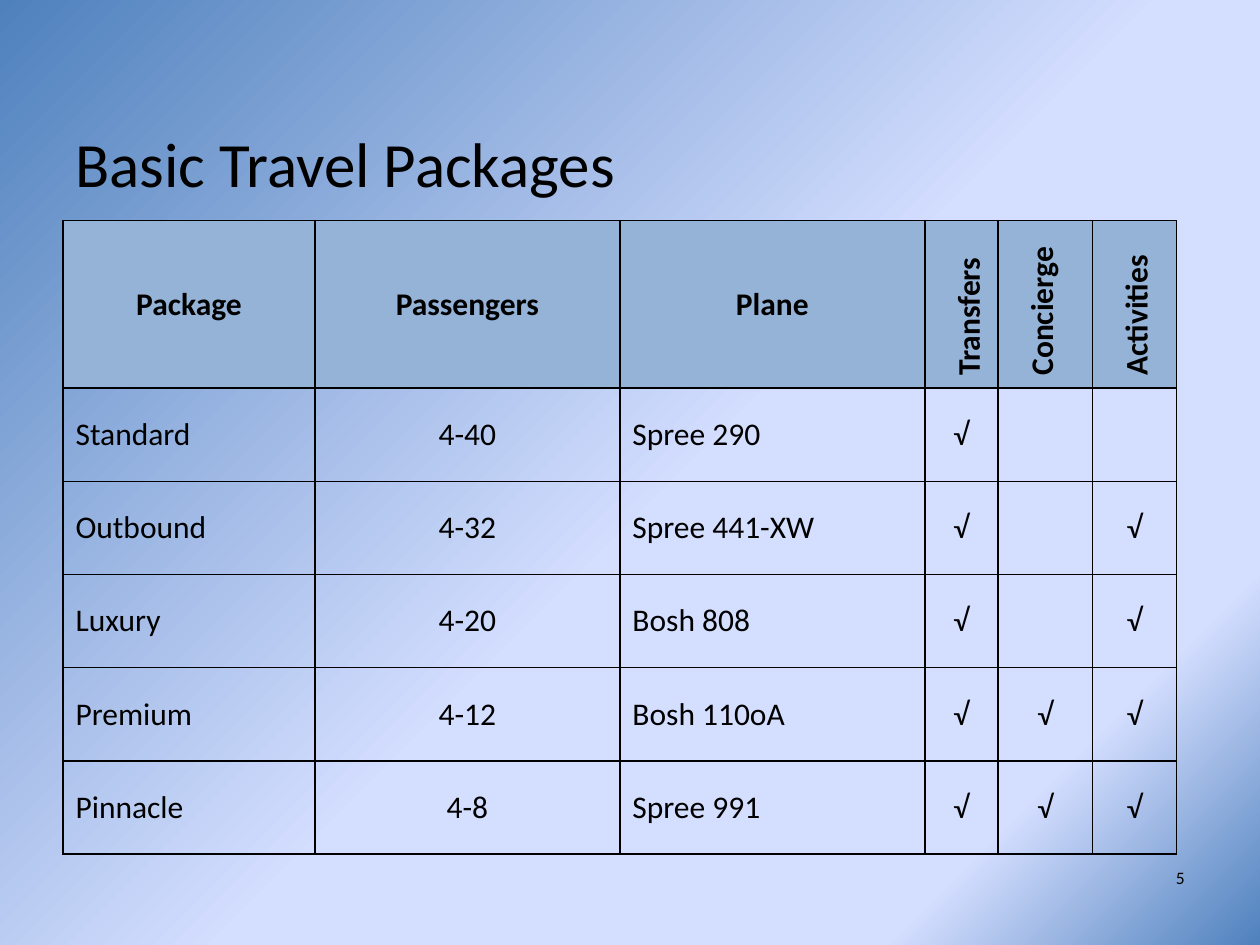
from lxml.etree import SubElement
from pptx import Presentation
from pptx.dml.color import RGBColor
from pptx.enum.text import MSO_ANCHOR, PP_ALIGN
from pptx.oxml.ns import qn
from pptx.util import Cm, Pt


def inches(value):
    return Cm(value * 2.54)


def colour(hex_string):
    return RGBColor.from_string(hex_string)


class PageBuilder:
    font_name = "Calibri"
    ink = "000000"
    header_fill = "95B3D7"
    sides = ("lnL", "lnR", "lnT", "lnB")

    def __init__(self, page):
        self.page = page

    def background(self, stops, angle):
        fill = self.page.background.fill
        fill.gradient()
        fill.gradient_angle = -angle % 360
        stop_list = next(self.page.element.iter(qn("a:gsLst")))
        for stop in list(stop_list):
            stop_list.remove(stop)
        for position, hex_string, opacity in stops:
            stop = SubElement(stop_list, qn("a:gs"), pos=str(position * 1000))
            shade = SubElement(stop, qn("a:srgbClr"), val=hex_string)
            if opacity < 100:
                SubElement(shade, qn("a:alpha"), val=str(opacity * 1000))

    def add_span(self, frame, text, size, bold=False, align=PP_ALIGN.LEFT):
        para = frame.paragraphs[0]
        para.alignment = align
        span = para.add_run()
        span.text = text
        formats = {"name": self.font_name, "size": Pt(size), "bold": bold}
        for name, value in formats.items():
            setattr(span.font, name, value)
        span.font.color.rgb = colour(self.ink)

    def text(self, place, text, size, anchor=MSO_ANCHOR.TOP, align=PP_ALIGN.LEFT):
        box = self.page.shapes.add_textbox(*map(inches, place))
        frame = box.text_frame
        frame.word_wrap = True
        frame.vertical_anchor = anchor
        self.add_span(frame, text, size, align=align)

    def borders(self, cell):
        properties = cell._tc.get_or_add_tcPr()
        for side in self.sides:
            line = SubElement(properties, qn(f"a:{side}"), w=str(int(Pt(1))))
            fill = SubElement(line, qn("a:solidFill"))
            SubElement(fill, qn("a:srgbClr"), val=self.ink)

    def cell(self, cell, text, header, upright, align):
        cell.vertical_anchor = MSO_ANCHOR.MIDDLE
        self.borders(cell)
        if header:
            cell.fill.solid()
            cell.fill.fore_color.rgb = colour(self.header_fill)
        else:
            cell.fill.background()
        if upright:
            cell._tc.get_or_add_tcPr().set("vert", "vert270")
            cell.margin_top = inches(0.2)
        if text:
            self.add_span(cell.text_frame, text, 18, header, align)

    def table(self, left, top, widths, heights, rows, centred, upright):
        table = self.page.shapes.add_table(
            len(rows), len(widths), inches(left), inches(top),
            inches(sum(widths)), inches(sum(heights))).table
        table.first_row = table.horz_banding = False
        for column, width in zip(table.columns, widths):
            column.width = inches(width)
        for row, height in zip(table.rows, heights):
            row.height = inches(height)
        for i, texts in enumerate(rows):
            header = i == 0
            for j, text in enumerate(texts):
                turned = header and j in upright
                middle = not turned and (header or j in centred)
                align = PP_ALIGN.CENTER if middle else PP_ALIGN.LEFT
                self.cell(table.cell(i, j), text, header, turned, align)


def main():
    deck = Presentation()
    deck.slide_width, deck.slide_height = inches(10), inches(7.5)
    builder = PageBuilder(deck.slides.add_slide(deck.slide_layouts[6]))

    # Background
    builder.background([(0, "4F81BD", 100), (53, "D4DEFF", 100),
                        (83, "D4DEFF", 100), (100, "4F81BD", 70)], angle=45)

    # Packages and the services each includes
    tick = "√"
    packages = [
        ("Package", "Passengers", "Plane", "Transfers", "Concierge", "Activities"),
        ("Standard", "4-40", "Spree 290", tick, "", ""),
        ("Outbound", "4-32", "Spree 441-XW", tick, "", tick),
        ("Luxury", "4-20", "Bosh 808", tick, "", tick),
        ("Premium", "4-12", "Bosh 110oA", tick, tick, tick),
        ("Pinnacle", "4-8", "Spree 991", tick, tick, tick),
    ]
    builder.table(0.5, 1.75, [2, 2.42, 2.42, 0.58, 0.75, 0.67],
                  [1.33] + [0.74] * 5, packages,
                  centred={1, 3, 4, 5}, upright={3, 4, 5})

    # Title and page number
    builder.text((0.5, 0.39, 9, 1.25), "Basic Travel Packages", 36,
                 anchor=MSO_ANCHOR.BOTTOM)
    builder.text((7.17, 6.83, 2.33, 0.52), "5", 10, align=PP_ALIGN.RIGHT)

    deck.save("out.pptx")


if __name__ == "__main__":
    main()
